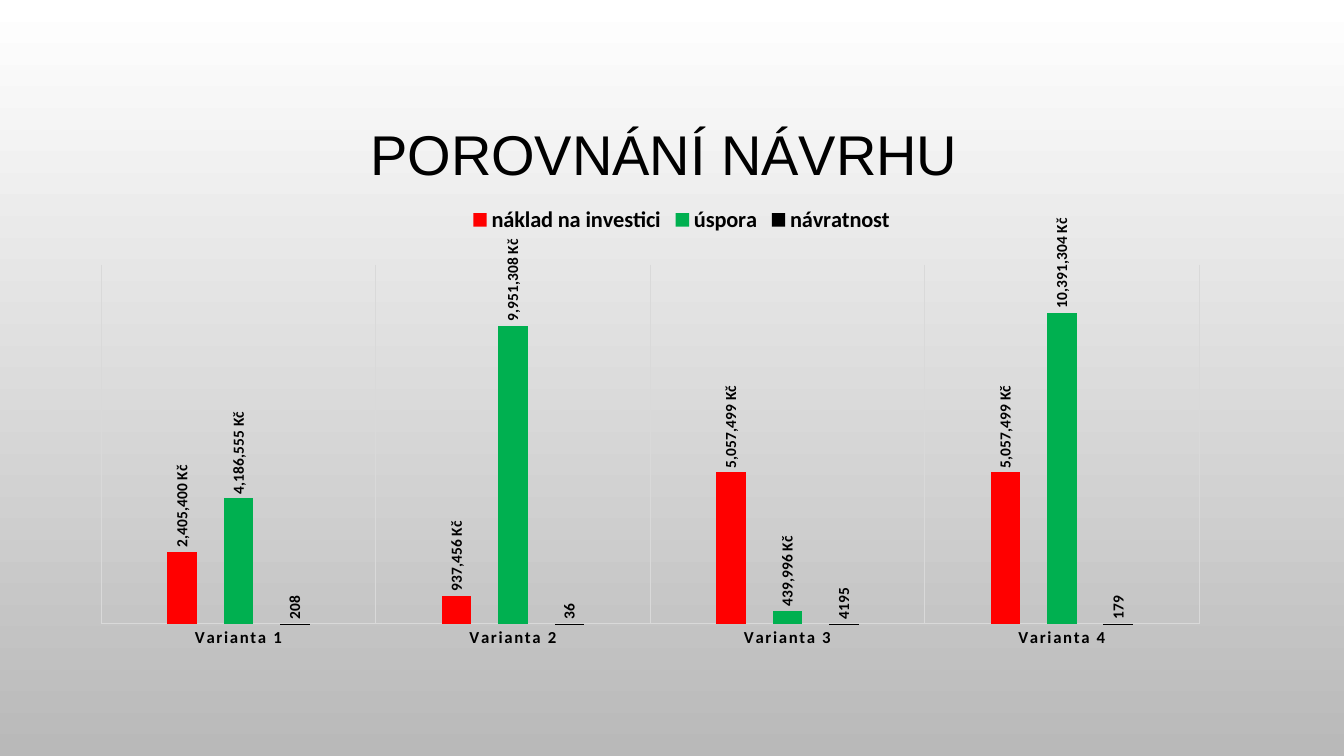
from lxml import etree
from pptx import Presentation
from pptx import util as u
from pptx.chart.data import CategoryChartData
from pptx.dml.color import RGBColor
from pptx.enum import chart as charts, text
from pptx.oxml.ns import qn

# Content
TITLE = "POROVNÁNÍ NÁVRHU "
VARIANTS = [f"Varianta {number}" for number in range(1, 5)]
CROWNS = '#,##0\\ "Kč"'
SERIES = [  # name, colour, number format, values
    ("náklad na investici", "cost", CROWNS, (2405400, 937456, 5057499, 5057499)),
    ("úspora", "saving", CROWNS, (4186555, 9951308, 439996, 10391304)),
    ("návratnost", "text", "General", (208, 36, 4195, 179)),
]
COLORS = {"top": "FFFFFF", "bottom": "B9B9B9", "text": "000000",
          "cost": "FF0000", "saving": "00B050", "grid": "D9D9D9"}
TITLE_BOX = (2.54, 1.73, 28.78, 4.45)
CHART_BOX = (2.54, 4.9, 29.26, 12.73)
PLOT_AREA = {"x": 0, "y": 0.139, "w": 0.946, "h": 0.711}


def rgb(name):
    return RGBColor.from_string(COLORS[name])


def set_all(target, values):
    for name, value in values.items():
        setattr(target, name, value)


def set_font(font, size, name="Calibri", bold=True):
    set_all(font, {"size": u.Pt(size), "name": name, "bold": bold})
    font.color.rgb = rgb("text")


def set_line(line):
    line.color.rgb = rgb("grid")
    line.width = u.Pt(0.75)


def place_plot(plot_area):
    for old_layout in plot_area.findall(qn("c:layout")):
        plot_area.remove(old_layout)
    layout = etree.Element(qn("c:layout"))
    manual = etree.SubElement(layout, qn("c:manualLayout"))
    settings = [("layoutTarget", "inner"), ("xMode", "edge"), ("yMode", "edge")]
    for tag, value in settings + list(PLOT_AREA.items()):
        etree.SubElement(manual, qn(f"c:{tag}")).set("val", str(value))
    plot_area.insert(0, layout)


# Slide and background
presentation = Presentation()
set_all(presentation, {"slide_width": u.Cm(33.87), "slide_height": u.Cm(19.05)})
slide = presentation.slides.add_slide(presentation.slide_layouts[5])
fill = slide.background.fill
fill.gradient()
fill.gradient_angle = 270
for stop, name in zip(fill.gradient_stops, ("top", "bottom")):
    stop.color.rgb = rgb(name)

# Title
title = slide.shapes.title
set_all(title, dict(zip(("left", "top", "width", "height"), map(u.Cm, TITLE_BOX))))
title.text_frame.text = TITLE
title.text_frame.vertical_anchor = text.MSO_ANCHOR.MIDDLE
paragraph = title.text_frame.paragraphs[0]
set_all(paragraph, {"alignment": text.PP_ALIGN.CENTER, "line_spacing": 0.9})
set_font(paragraph.runs[0].font, 40, "Arial", False)

# Chart
data = CategoryChartData()
data.categories = VARIANTS
for name, _, number_format, values in SERIES:
    data.add_series(name, values, number_format)
chart = slide.shapes.add_chart(charts.XL_CHART_TYPE.COLUMN_CLUSTERED,
                               *map(u.Cm, CHART_BOX), data).chart
set_font(chart.font, 10, bold=False)
set_all(chart, {"has_title": False, "has_legend": True})
set_all(chart.legend, {"position": charts.XL_LEGEND_POSITION.TOP,
                       "include_in_layout": False})
set_font(chart.legend.font, 16)
plot = chart.plots[0]
set_all(plot, {"gap_width": 444, "overlap": -90, "vary_by_categories": False})

# Axes
set_all(chart.value_axis, {"visible": False, "has_major_gridlines": False,
                           "minimum_scale": 0, "maximum_scale": 12000000})
axis = chart.category_axis
set_all(axis, {"has_major_gridlines": True,
               "major_tick_mark": charts.XL_TICK_MARK.NONE})
set_font(axis.tick_labels.font, 12)
set_line(axis.format.line)
set_line(axis.major_gridlines.format.line)

# Columns and their labels
for series, (_, color, number_format, _) in zip(plot.series, SERIES):
    series.format.fill.solid()
    series.format.fill.fore_color.rgb = rgb(color)
    labels = series.data_labels
    set_all(labels, {"show_value": True, "number_format": number_format,
                     "number_format_is_linked": False,
                     "position": charts.XL_LABEL_POSITION.OUTSIDE_END})
    set_font(labels.font, 11)

# Plot position, upright labels and spaced category names
place_plot(chart.element.xpath(".//c:plotArea")[0])
for body in chart.element.xpath(".//c:dLbls//a:bodyPr"):
    body.set("rot", "-5400000")
    body.set("vert", "horz")
for properties in chart.element.xpath(".//c:catAx//a:defRPr"):
    properties.set("spc", "120")

presentation.save("out.pptx")
